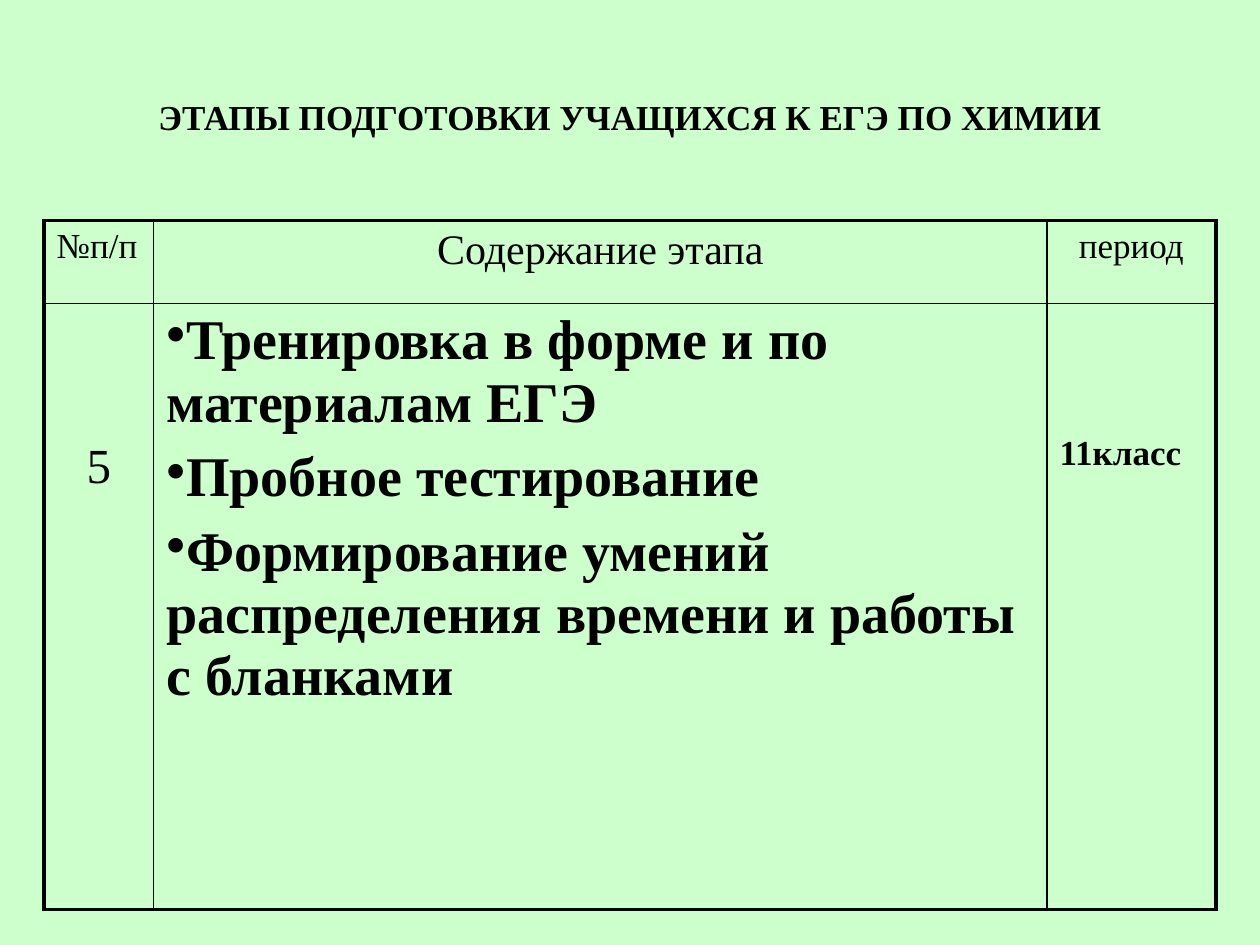
import pptx
import pptx.dml.color
import pptx.enum.text
import pptx.oxml.ns
import pptx.util
from lxml import etree

Inches, Pt = pptx.util.Inches, pptx.util.Pt
ALIGN = pptx.enum.text.PP_ALIGN
FONT = "Times New Roman"
COLORS = {"background": "CDFFCD", "ink": "000000"}
TITLE = "ЭТАПЫ ПОДГОТОВКИ УЧАЩИХСЯ К ЕГЭ ПО ХИМИИ"
COLS = [0.87, 7.09, 1.34]
ROWS = [0.66, 4.81]
THIN, THICK = 1, 2.25
CELLS = [
    [
        {"lines": ["№п/п"], "size": 20},
        {"lines": ["Содержание этапа"], "size": 24, "align": ALIGN.CENTER},
        {"lines": ["период"], "size": 20, "align": ALIGN.CENTER},
    ],
    [
        {"lines": ["5"], "size": 28, "align": ALIGN.CENTER, "top": 1.08},
        {"lines": ["Тренировка в форме и по материалам ЕГЭ",
                   "Пробное тестирование",
                   "Формирование умений распределения времени и работы с бланками"],
         "size": 32, "bold": True, "bullet": True},
        {"lines": ["11класс"], "size": 20, "bold": True, "top": 1.04},
    ],
]


def color(name):
    return pptx.dml.color.RGBColor.from_string(COLORS[name])


def add(parent, tag, **attrs):
    return etree.SubElement(parent, pptx.oxml.ns.qn(tag), attrs)


def write(tf, lines, size, bold=False, align=ALIGN.LEFT, bullet=False):
    tf.word_wrap = True
    for i, line in enumerate(lines):
        p = tf.paragraphs[0] if i == 0 else tf.add_paragraph()
        p.text = line
        p.alignment = align
        if i:
            p.space_before = Pt(7)
        if bullet:
            pPr = p._p.get_or_add_pPr()
            pPr.set("marL", "0")
            pPr.set("indent", "0")
            add(pPr, "a:buChar", char="•")
        p.font.name, p.font.size, p.font.bold = FONT, Pt(size), bold
        p.font.color.rgb = color("ink")


def add_borders(cell, row, col):
    outer = {"a:lnL": col == 0, "a:lnR": col == len(COLS) - 1,
             "a:lnT": row == 0, "a:lnB": row == len(ROWS) - 1}
    tcPr = cell._tc.get_or_add_tcPr()
    for tag, is_outer in outer.items():
        ln = add(tcPr, tag, w=str(Pt(THICK if is_outer else THIN)))
        add(add(ln, "a:solidFill"), "a:srgbClr", val=COLORS["ink"])


prs = pptx.Presentation()
prs.slide_width, prs.slide_height = Inches(10), Inches(7.5)
s = prs.slides.add_slide(prs.slide_layouts[6])
s.background.fill.solid()
s.background.fill.fore_color.rgb = color("background")

tf = s.shapes.add_textbox(Inches(0.5), Inches(0.3), Inches(9), Inches(1.25)).text_frame
tf.vertical_anchor = pptx.enum.text.MSO_ANCHOR.MIDDLE
write(tf, [TITLE], 20, True, ALIGN.CENTER)

table = s.shapes.add_table(len(ROWS), len(COLS), Inches(0.35), Inches(1.75),
                           Inches(sum(COLS)), Inches(sum(ROWS))).table
table.first_row = table.horz_banding = False
for column, width in zip(table.columns, COLS):
    column.width = Inches(width)
for row, height in zip(table.rows, ROWS):
    row.height = Inches(height)
for r, cells in enumerate(CELLS):
    for c, content in enumerate(cells):
        cell = table.cell(r, c)
        style = dict(content)
        cell.margin_top = Inches(style.pop("top", 0.05))
        write(cell.text_frame, **style)
        add_borders(cell, r, c)
        cell.fill.background()

prs.save("out.pptx")
